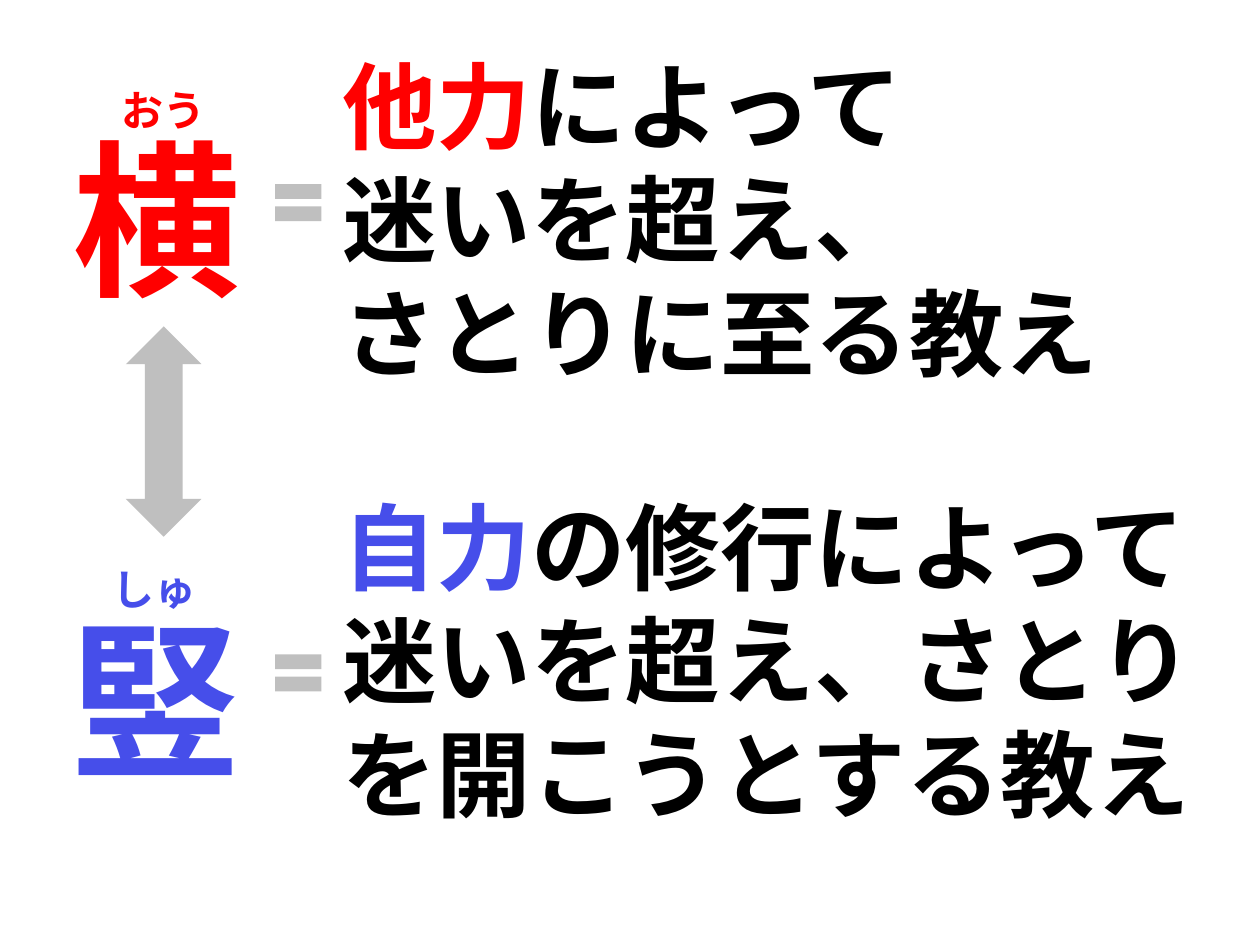
from pptx import Presentation
from pptx.dml.color import RGBColor
from pptx.enum import lang, shapes, text
from pptx.util import Cm, Pt

RED = RGBColor(0xFF, 0x00, 0x00)
BLUE = RGBColor(0x46, 0x4E, 0xEA)
BLACK = RGBColor(0x00, 0x00, 0x00)
GREY = RGBColor(0xBF, 0xBF, 0xBF)

FONT = "Calibri"
MEANING_LEFT = 6.65
EQUALS_SIZE = 1.27


def add_text(parent, paragraphs, *, left, top, width, height, size, wrap=True):
    """Add a text box; each paragraph is a list of (wording, colour) spans."""
    box = parent.shapes.add_textbox(Cm(left), Cm(top), Cm(width), Cm(height))
    frame = box.text_frame
    frame.word_wrap = wrap
    frame.auto_size = text.MSO_AUTO_SIZE.SHAPE_TO_FIT_TEXT
    for index, spans in enumerate(paragraphs):
        para = frame.add_paragraph() if index else frame.paragraphs[0]
        for wording, colour in spans:
            span = para.add_run()
            span.text = wording
            span.font.name = FONT
            span.font.size = Pt(size)
            span.font.bold = True
            span.font.color.rgb = colour
            span.font.language_id = lang.MSO_LANGUAGE_ID.JAPANESE


def add_symbol(page, kind, left, top, width, height):
    symbol = page.shapes.add_shape(kind, Cm(left), Cm(top), Cm(width), Cm(height))
    symbol.shadow.inherit = False
    symbol.fill.solid()
    symbol.fill.fore_color.rgb = GREY
    symbol.line.fill.background()


def add_term(page, kanji, reading, colour, *, kanji_at, reading_at, width, wrap):
    """Group a large kanji with its reading above it."""
    group = page.shapes.add_group_shape()
    add_text(group, [[(kanji, colour)]], left=kanji_at[0], top=kanji_at[1],
             width=width, height=4.37, size=96, wrap=wrap)
    add_text(group, [[(reading, colour)]], left=reading_at[0], top=reading_at[1],
             width=2.24, height=1.27, size=24, wrap=False)


def add_meaning(page, paragraphs, top, width):
    add_text(page, paragraphs, left=MEANING_LEFT, top=top,
             width=width, height=7.19, size=54)


def main():
    deck = Presentation()
    deck.slide_width, deck.slide_height = Cm(25.4), Cm(19.05)
    page = deck.slides.add_slide(deck.slide_layouts[6])

    add_meaning(page, [
        [("他力", RED), ("によって", BLACK)],
        [("迷いを超え、", BLACK)],
        [("さとりに至る教え", BLACK)],
    ], top=0.84, width=16.61)
    add_term(page, "横", "おう", RED, kanji_at=(1.22, 2.21),
             reading_at=(2.21, 1.57), width=3.94, wrap=False)
    add_term(page, "竪", "しゅ", BLUE, kanji_at=(1.19, 11.89),
             reading_at=(2.01, 11.23), width=4.22, wrap=True)
    add_meaning(page, [
        [("自力", BLUE),
         ("の修行によって迷いを超え、さとりを開こうとする教え", BLACK)],
    ], top=9.73, width=18.21)

    add_symbol(page, shapes.MSO_SHAPE.UP_DOWN_ARROW, 2.54, 6.58, 1.52, 4.24)
    for top in (3.45, 12.93):
        add_symbol(page, shapes.MSO_SHAPE.MATH_EQUAL, MEANING_LEFT - EQUALS_SIZE,
                   top, EQUALS_SIZE, EQUALS_SIZE)

    deck.save("out.pptx")


if __name__ == "__main__":
    main()
